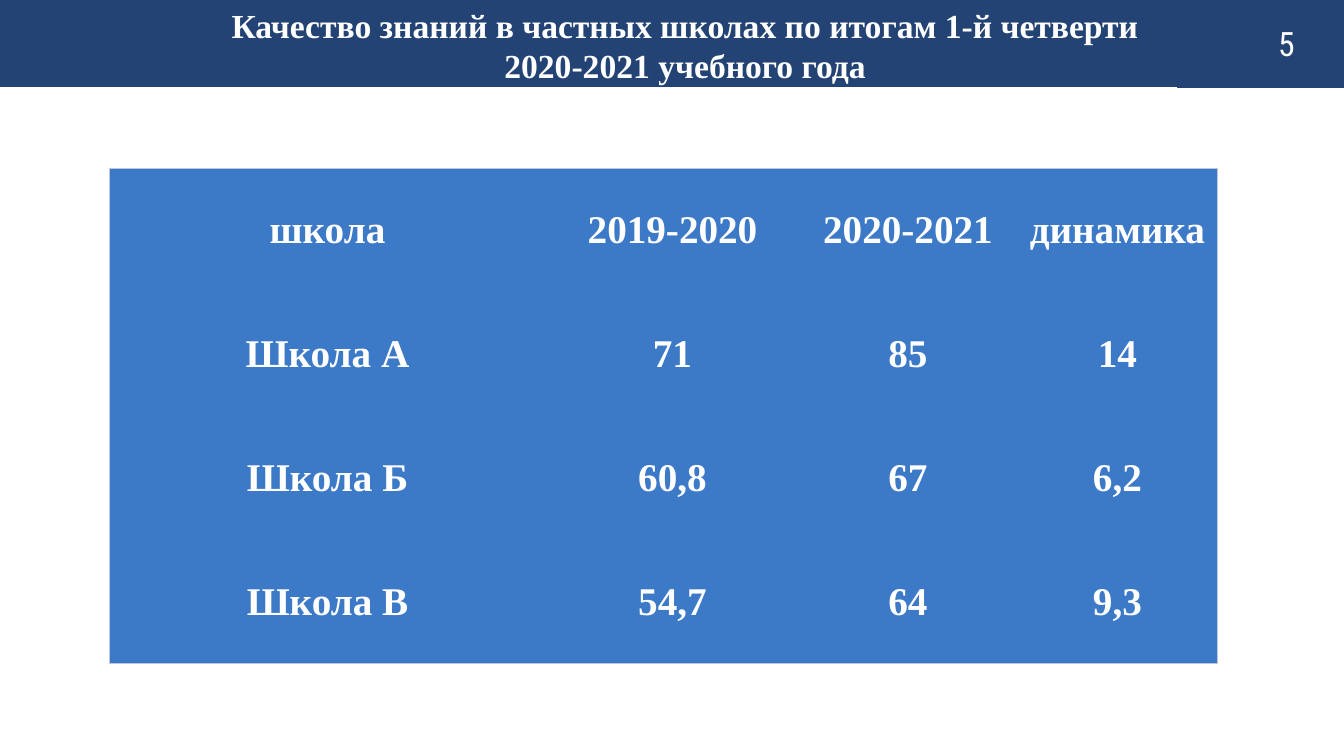
from lxml.etree import SubElement
from pptx import Presentation
from pptx.dml.color import RGBColor
from pptx.enum.text import MSO_ANCHOR, PP_ALIGN
from pptx.oxml.ns import qn
from pptx.util import Emu, Pt

TITLE = ["Качество знаний в частных школах по итогам 1-й четверти", "2020-2021 учебного года"]
PAGE_NUMBER = ["5"]
ROWS = [
    ("школа", "2019-2020", "2020-2021", "динамика"),
    ("Школа А", "71", "85", "14"),
    ("Школа Б", "60,8", "67", "6,2"),
    ("Школа В", "54,7", "64", "9,3"),
]
COLUMN_WIDTHS = [437, 253, 218, 201]
ROW_HEIGHT = 124
TABLE_LEFT, TABLE_TOP = 109, 168
BANNER_PARTS = [
    [(1344, 0), (0, 0), (0, 87), (1344, 87)],
    [(167, 0), (0, 0), (0, 87), (127, 86)],
    [(1344, 1), (1218, 1), (1177, 88), (1344, 88)],
]

NAVY = RGBColor(0x24, 0x43, 0x75)
BLUE = RGBColor(0x3C, 0x79, 0xC7)
WHITE = RGBColor(0xFF, 0xFF, 0xFF)
OUTLINE = RGBColor(0xBD, 0xC8, 0xDD)
SERIF = "Times New Roman"
EMU_PER_PX = 914400 / 100.8


def px(length):
    return Emu(round(length * EMU_PER_PX))


def style(para, size, font, bold, align):
    para.alignment = align
    para.font.size = Pt(size)
    para.font.name = font
    para.font.bold = bold
    para.font.color.rgb = WHITE


def add_text(page, bounds, lines, font, bold, align):
    box = page.shapes.add_textbox(*map(px, bounds))
    frame = box.text_frame
    frame.word_wrap = False
    frame.text = "\n".join(lines)
    for para in frame.paragraphs:
        style(para, 24, font, bold, align)
    return frame


def set_border(cell, position, side, visible):
    properties = cell._tc.get_or_add_tcPr()
    line = SubElement(properties, qn(f"a:ln{side}"), w=str(Pt(0.75)))
    properties.insert(position, line)
    if visible:
        fill = SubElement(line, qn("a:solidFill"))
        SubElement(fill, qn("a:srgbClr"), val=str(OUTLINE))
    else:
        SubElement(line, qn("a:noFill"))


def add_banner(page):
    for points in BANNER_PARTS:
        builder = page.shapes.build_freeform(*points[0], scale=EMU_PER_PX)
        builder.add_line_segments(points[1:], close=True)
        part = builder.convert_to_shape()
        part.shadow.inherit = False
        part.fill.solid()
        part.fill.fore_color.rgb = NAVY
        part.line.fill.background()


def add_results(page):
    last_row, last_column = len(ROWS) - 1, len(COLUMN_WIDTHS) - 1
    bounds = (TABLE_LEFT, TABLE_TOP, sum(COLUMN_WIDTHS), ROW_HEIGHT * len(ROWS))
    table = page.shapes.add_table(len(ROWS), len(COLUMN_WIDTHS), *map(px, bounds)).table
    for column, width in zip(table.columns, COLUMN_WIDTHS):
        column.width = px(width)
    for row_index, values in enumerate(ROWS):
        table.rows[row_index].height = px(ROW_HEIGHT)
        for column_index, value in enumerate(values):
            cell = table.cell(row_index, column_index)
            cell.text = value
            cell.vertical_anchor = MSO_ANCHOR.MIDDLE
            cell.fill.solid()
            cell.fill.fore_color.rgb = BLUE
            style(cell.text_frame.paragraphs[0], 28, SERIF, True, PP_ALIGN.CENTER)
            edges = {
                "L": column_index == 0,
                "R": column_index == last_column,
                "T": row_index == 0,
                "B": row_index == last_row,
            }
            for position, (side, visible) in enumerate(edges.items()):
                set_border(cell, position, side, visible)


def main():
    deck = Presentation()
    deck.slide_width, deck.slide_height = px(1344), px(756)
    page = deck.slides.add_slide(deck.slide_layouts[6])
    add_banner(page)
    number = add_text(page, (1278, 22, 16, 42), PAGE_NUMBER, "Roboto Condensed", False, PP_ALIGN.LEFT)
    number.margin_left = number.margin_right = number.margin_bottom = 0
    number.margin_top = px(1)
    add_text(page, (210, 0, 950, 92), TITLE, SERIF, True, PP_ALIGN.CENTER)
    add_results(page)
    deck.save("out.pptx")


if __name__ == "__main__":
    main()
